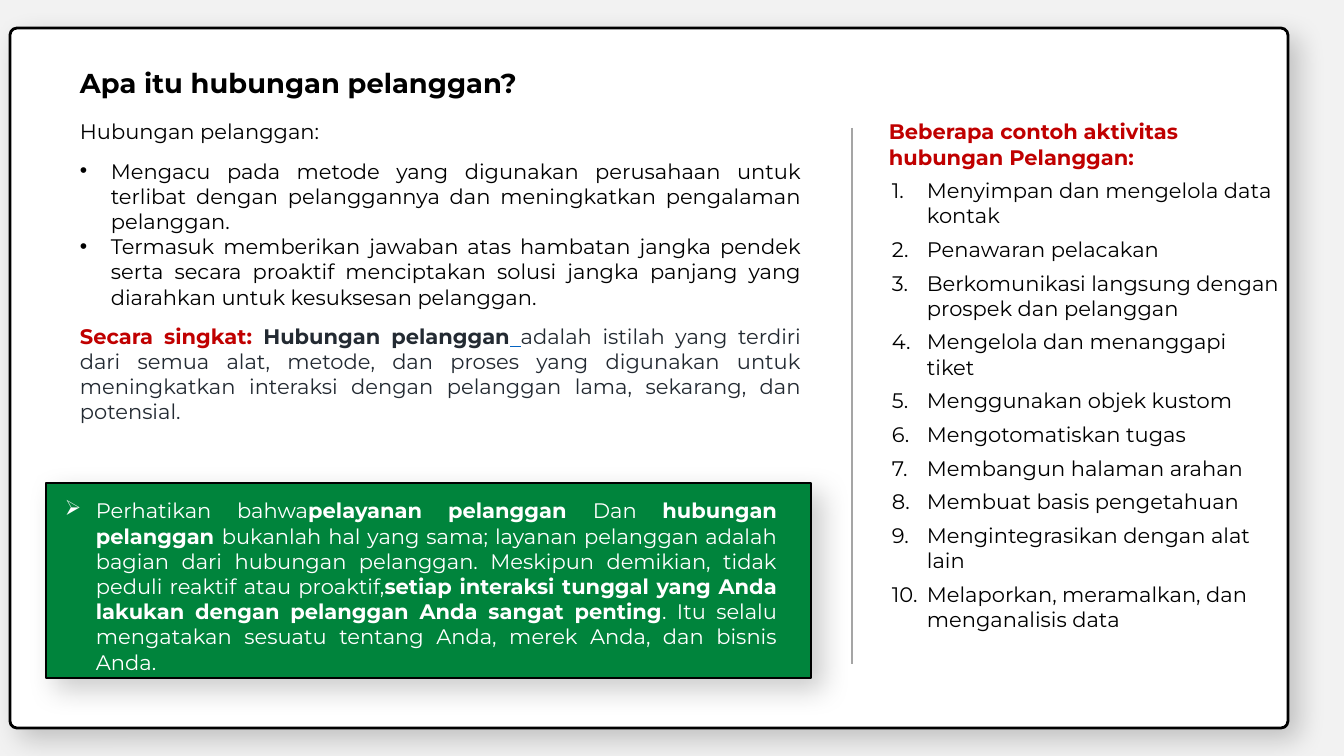
from lxml import etree
from pptx import Presentation
from pptx.dml.color import RGBColor
from pptx.enum.shapes import MSO_CONNECTOR, MSO_SHAPE
from pptx.enum.text import MSO_ANCHOR, MSO_AUTO_SIZE, PP_ALIGN
from pptx.oxml.ns import qn
from pptx.util import Emu, Pt

ROUNDED = MSO_SHAPE.ROUNDED_RECTANGLE
STRAIGHT = MSO_CONNECTOR.STRAIGHT
JUSTIFY, LEFT = PP_ALIGN.JUSTIFY, PP_ALIGN.LEFT
MIDDLE, TOP = MSO_ANCHOR.MIDDLE, MSO_ANCHOR.TOP
GROW, FIXED = MSO_AUTO_SIZE.SHAPE_TO_FIT_TEXT, MSO_AUTO_SIZE.NONE

FONT = "Montserrat"
DOT = ("buChar", {"char": "•"}, {"typeface": "Arial"})
ARROW = ("buChar", {"char": "Ø"}, {"typeface": "Wingdings", "pitchFamily": "2", "charset": "2"})
NUMBER = ("buAutoNum", {"type": "arabicPeriod"}, {"typeface": FONT})
BLACK, WHITE, PAPER = "000000", "FFFFFF", "F2F2F2"
RED, GREEN, INK, LINK, GREY = "C00000", "00843C", "232A32", "0563C1", "A5A5A5"
EMU_PER_PX = 914400 / 100.8

SLIDE_SIZE = (1344, 756)
CARD = (10, 28, 1278, 700)
NOTE_PANEL = (46, 483, 765, 195)
DIVIDER = (852, 128, 852, 664)
TITLE_BOX = (70, 55, 1159, 59)
DEFINITION_BOX = (70, 114, 741, 333)
ACTIVITY_BOX = (879, 114, 410, 511)
NOTE_BOX = (55, 493, 732, 197)

TITLE = "Apa itu hubungan pelanggan?"
INTRO = "Hubungan pelanggan:"
POINTS = [
    "Mengacu pada metode yang digunakan perusahaan untuk terlibat dengan pelanggannya "
    "dan meningkatkan pengalaman pelanggan.",
    "Termasuk memberikan jawaban atas hambatan jangka pendek serta secara proaktif "
    "menciptakan solusi jangka panjang yang diarahkan untuk kesuksesan pelanggan.",
]
SUMMARY = [
    ("Secara singkat: ", {"color": RED, "bold": True}),
    ("Hubungan pelanggan", {"color": INK, "bold": True}),
    (" ", {"color": LINK, "underline": True}),
    ("adalah istilah yang terdiri dari semua alat, metode, dan proses yang digunakan untuk "
     "meningkatkan interaksi dengan pelanggan lama, sekarang, dan potensial.", {"color": INK}),
]
ACTIVITY_TITLE = "Beberapa contoh aktivitas hubungan Pelanggan:"
ACTIVITIES = [
    "Menyimpan dan mengelola data kontak",
    "Penawaran pelacakan",
    "Berkomunikasi langsung dengan prospek dan pelanggan",
    "Mengelola dan menanggapi tiket",
    "Menggunakan objek kustom",
    "Mengotomatiskan tugas",
    "Membangun halaman arahan",
    "Membuat basis pengetahuan",
    "Mengintegrasikan dengan alat lain",
    "Melaporkan, meramalkan, dan menganalisis data",
]
NOTE = [
    ("Perhatikan bahwa", {}),
    ("pelayanan pelanggan ", {"bold": True}),
    ("Dan ", {}),
    ("hubungan pelanggan ", {"bold": True}),
    ("bukanlah hal yang sama; layanan pelanggan adalah bagian dari hubungan pelanggan. "
     "Meskipun demikian, tidak peduli reaktif atau proaktif,", {}),
    ("setiap interaksi tunggal yang Anda lakukan dengan pelanggan Anda sangat penting",
     {"bold": True}),
    (". Itu selalu mengatakan sesuatu tentang Anda, merek Anda, dan bisnis Anda.", {}),
]


def px(length):
    return Emu(round(length * EMU_PER_PX))


def rgb(value):
    return RGBColor.from_string(value)


def add_panel(slide, box, fill, radius):
    shape = slide.shapes.add_shape(ROUNDED, *map(px, box))
    shape.adjustments[0] = radius
    shape.fill.solid()
    shape.fill.fore_color.rgb = rgb(fill)
    shape.line.color.rgb = rgb(BLACK)
    shape.line.width = Pt(2)
    shape.shadow.inherit = False
    effects = shape._element.spPr.find(qn("a:effectLst"))
    shadow = etree.SubElement(effects, qn("a:outerShdw"), blurRad=str(Pt(20)),
                              dist=str(Pt(10)), dir=str(45 * 60000),
                              algn="tl", rotWithShape="0")
    color = etree.SubElement(shadow, qn("a:srgbClr"), val=BLACK)
    etree.SubElement(color, qn("a:alpha"), val="20000")


def add_divider(slide, ends):
    connector = slide.shapes.add_connector(STRAIGHT, *map(px, ends))
    connector.line.color.rgb = rgb(GREY)
    connector.line.width = Pt(0.75)
    etree.SubElement(connector._element.spPr, qn("a:effectLst"))


def add_text_box(slide, box, anchor=TOP, auto_size=GROW):
    frame = slide.shapes.add_textbox(*map(px, box)).text_frame
    frame.word_wrap = True
    frame.auto_size = auto_size
    frame.vertical_anchor = anchor
    return frame


def set_bullet(paragraph, bullet, color, margin, hanging):
    tag, mark, font = bullet
    properties = paragraph._p.get_or_add_pPr()
    properties.set("marL", str(px(margin)))
    properties.set("indent", str(-px(hanging)))
    bullet_color = etree.SubElement(properties, qn("a:buClr"))
    etree.SubElement(bullet_color, qn("a:srgbClr"), val=color)
    etree.SubElement(properties, qn("a:buFont"), **font)
    etree.SubElement(properties, qn(f"a:{tag}"), **mark)


def add_text(frame, text, size=15, color=BLACK, bold=False, align=LEFT, before=0, after=0,
             spacing=None, bullet=None, margin=31, hanging=31):
    paragraph = frame.paragraphs[0]
    if paragraph.runs:
        paragraph = frame.add_paragraph()
    paragraph.alignment = align
    paragraph.space_before = Pt(before)
    paragraph.space_after = Pt(after)
    if spacing:
        paragraph.line_spacing = spacing
    if bullet:
        set_bullet(paragraph, bullet, color, margin, hanging)
    pieces = [(text, {})] if isinstance(text, str) else text
    for words, style in pieces:
        run = paragraph.add_run()
        run.text = words
        run.font.name = FONT
        run.font.size = Pt(size)
        run.font.bold = style.get("bold", bold)
        run.font.underline = style.get("underline", False)
        run.font.color.rgb = rgb(style.get("color", color))


def main():
    presentation = Presentation()
    presentation.slide_width, presentation.slide_height = map(px, SLIDE_SIZE)
    slide = presentation.slides.add_slide(presentation.slide_layouts[6])
    slide.background.fill.solid()
    slide.background.fill.fore_color.rgb = rgb(PAPER)

    add_panel(slide, CARD, WHITE, 0.01)
    add_divider(slide, DIVIDER)

    title = add_text_box(slide, TITLE_BOX, anchor=MIDDLE, auto_size=FIXED)
    add_text(title, TITLE, size=19.5, bold=True, spacing=0.9)

    definition = add_text_box(slide, DEFINITION_BOX)
    add_text(definition, INTRO, align=JUSTIFY)
    for index, point in enumerate(POINTS):
        add_text(definition, point, align=JUSTIFY, before=0 if index else 10, bullet=DOT)
    add_text(definition, SUMMARY, align=JUSTIFY, before=10, after=10)

    add_panel(slide, NOTE_PANEL, GREEN, 0)

    activities = add_text_box(slide, ACTIVITY_BOX)
    add_text(activities, ACTIVITY_TITLE, color=RED, bold=True)
    for activity in ACTIVITIES:
        add_text(activities, activity, before=6, after=6 if activity == ACTIVITIES[-1] else 0,
                 bullet=NUMBER, margin=38, hanging=35)

    note = add_text_box(slide, NOTE_BOX)
    add_text(note, NOTE, color=WHITE, align=JUSTIFY, after=6, bullet=ARROW)

    presentation.save("out.pptx")


if __name__ == "__main__":
    main()
